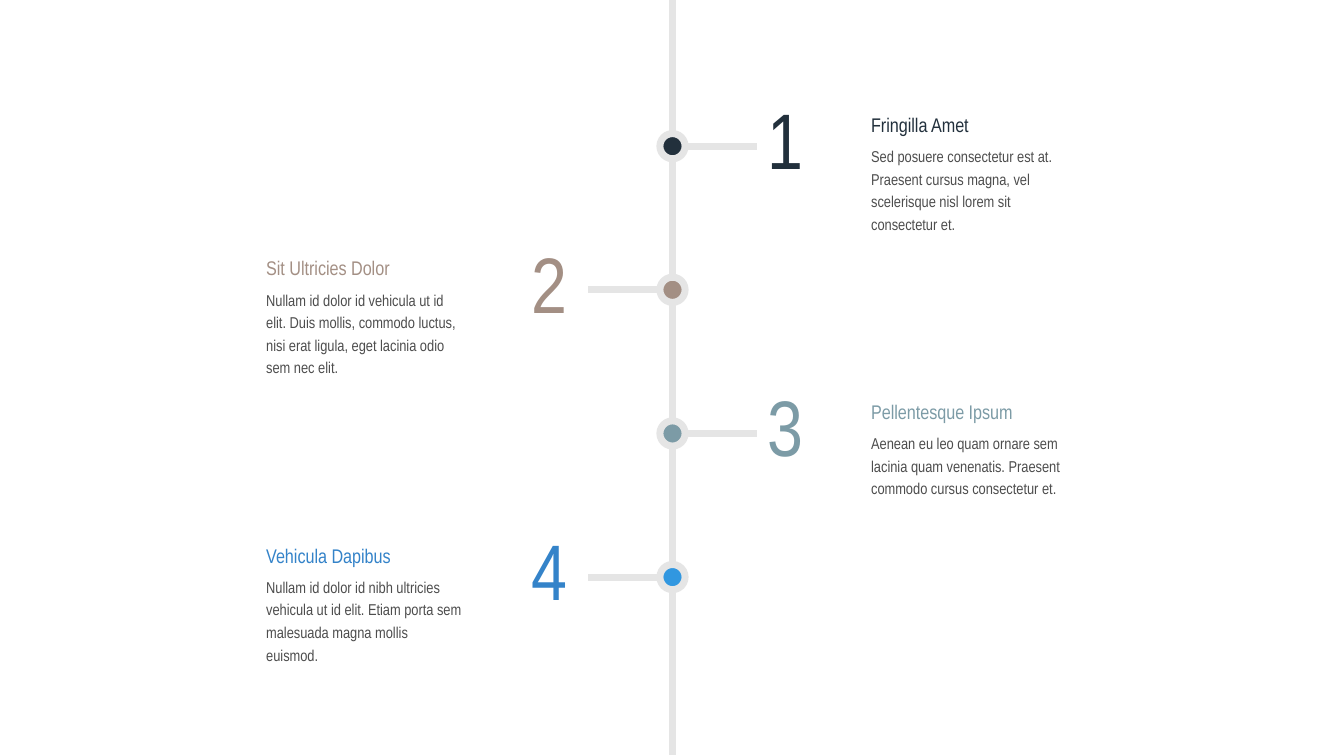
from dataclasses import dataclass

import lxml.etree
import pptx
import pptx.dml.color
import pptx.enum.shapes
import pptx.enum.text
import pptx.oxml.ns
import pptx.slide
import pptx.util

Inches = pptx.util.Inches
Pt = pptx.util.Pt
Align = pptx.enum.text.PP_ALIGN
Anchor = pptx.enum.text.MSO_ANCHOR

FONT = "Arial Narrow"
RAIL_COLOUR = "E5E5E5"
BODY_COLOUR = "4D4D4D"
RAIL_WIDTH = 5
AXIS_X = 6.67
FIRST_Y = 1.45
STEP_Y = 1.425
DOT_SIZE = 0.25
BRANCH_START = 0.12
BRANCH_END = 0.84


@dataclass(frozen=True)
class Milestone:
    heading: str
    body: str
    colour: str
    dot_colour: str


@dataclass(frozen=True)
class Side:
    direction: int
    text_left: float
    number_left: float
    number_align: Align


@dataclass(frozen=True)
class TextStyle:
    size: float
    colour: str
    anchor: Anchor
    align: Align = Align.LEFT
    line_spacing: float = 1.0
    space_before: float = 0


MILESTONES = [
    Milestone(
        "Fringilla Amet",
        "Sed posuere consectetur est at. Praesent cursus magna, vel "
        "scelerisque nisl lorem sit consectetur et.",
        "22303C", "22303C",
    ),
    Milestone(
        "Sit Ultricies Dolor",
        "Nullam id dolor id vehicula ut id elit. Duis mollis, commodo luctus, "
        "nisi erat ligula, eget lacinia odio sem nec elit.",
        "A38F84", "A38F84",
    ),
    Milestone(
        "Pellentesque Ipsum",
        "Aenean eu leo quam ornare sem lacinia quam venenatis. Praesent "
        "commodo cursus consectetur et.",
        "7C9BA6", "7C9BA6",
    ),
    Milestone(
        "Vehicula Dapibus",
        "Nullam id dolor id nibh ultricies vehicula ut id elit. Etiam porta "
        "sem malesuada magna mollis euismod.",
        "3483C9", "3197E0",
    ),
]
SIDES = [Side(1, 8.64, 7.61, Align.LEFT), Side(-1, 2.64, 4.75, Align.RIGHT)]


def colour(value: str) -> pptx.dml.color.RGBColor:
    return pptx.dml.color.RGBColor.from_string(value)


def add_text(slide: pptx.slide.Slide, text: str, left: float, top: float,
             width: float, height: float, style: TextStyle) -> None:
    shape = slide.shapes.add_textbox(
        Inches(left), Inches(top), Inches(width), Inches(height))
    frame = shape.text_frame
    frame.word_wrap = True
    frame.vertical_anchor = style.anchor
    frame.margin_left = frame.margin_right = Inches(0)
    frame.margin_top = frame.margin_bottom = Inches(0)
    paragraph = frame.paragraphs[0]
    paragraph.alignment = style.align
    paragraph.line_spacing = style.line_spacing
    paragraph.space_before = Pt(style.space_before)
    run = paragraph.add_run()
    run.text = text
    run.font.name = FONT
    run.font.size = Pt(style.size)
    run.font.color.rgb = colour(style.colour)


def add_rail(slide: pptx.slide.Slide, start_x: float, start_y: float,
             end_x: float, end_y: float) -> None:
    connector = slide.shapes.add_connector(
        pptx.enum.shapes.MSO_CONNECTOR.STRAIGHT,
        Inches(start_x), Inches(start_y), Inches(end_x), Inches(end_y))
    connector.line.color.rgb = colour(RAIL_COLOUR)
    connector.line.width = Pt(RAIL_WIDTH)
    properties = connector.element.find(pptx.oxml.ns.qn("p:spPr"))
    lxml.etree.SubElement(properties, pptx.oxml.ns.qn("a:effectLst"))


def add_dot(slide: pptx.slide.Slide, center_y: float, fill: str) -> None:
    shape = slide.shapes.add_shape(
        pptx.enum.shapes.MSO_SHAPE.OVAL,
        Inches(AXIS_X - DOT_SIZE / 2), Inches(center_y - DOT_SIZE / 2),
        Inches(DOT_SIZE), Inches(DOT_SIZE))
    shape.shadow.inherit = False
    shape.fill.solid()
    shape.fill.fore_color.rgb = colour(fill)
    shape.line.color.rgb = colour(RAIL_COLOUR)
    shape.line.width = Pt(RAIL_WIDTH)


def add_milestone(slide: pptx.slide.Slide, index: int,
                  milestone: Milestone) -> None:
    side = SIDES[index % 2]
    center_y = FIRST_Y + index * STEP_Y
    add_rail(slide, AXIS_X + side.direction * BRANCH_START, center_y,
             AXIS_X + side.direction * BRANCH_END, center_y)
    add_dot(slide, center_y, milestone.dot_colour)
    add_text(slide, str(index + 1), side.number_left, center_y - 0.47,
             0.88, 0.78,
             TextStyle(56.2, milestone.colour, Anchor.MIDDLE, side.number_align))
    add_text(slide, milestone.heading, side.text_left, center_y - 0.34,
             1.95, 0.24,
             TextStyle(14.1, milestone.colour, Anchor.BOTTOM,
                       line_spacing=1.1, space_before=30))
    add_text(slide, milestone.body, side.text_left, center_y - 0.03,
             1.95, 0.83,
             TextStyle(11.2, BODY_COLOUR, Anchor.TOP,
                       line_spacing=1.2, space_before=10))


def main() -> None:
    presentation = pptx.Presentation()
    presentation.slide_width = Inches(13.33)
    presentation.slide_height = Inches(7.5)
    slide = presentation.slides.add_slide(presentation.slide_layouts[6])
    add_rail(slide, AXIS_X, 0, AXIS_X, 7.49)
    for index, milestone in enumerate(MILESTONES):
        add_milestone(slide, index, milestone)
    presentation.save("out.pptx")


if __name__ == "__main__":
    main()
